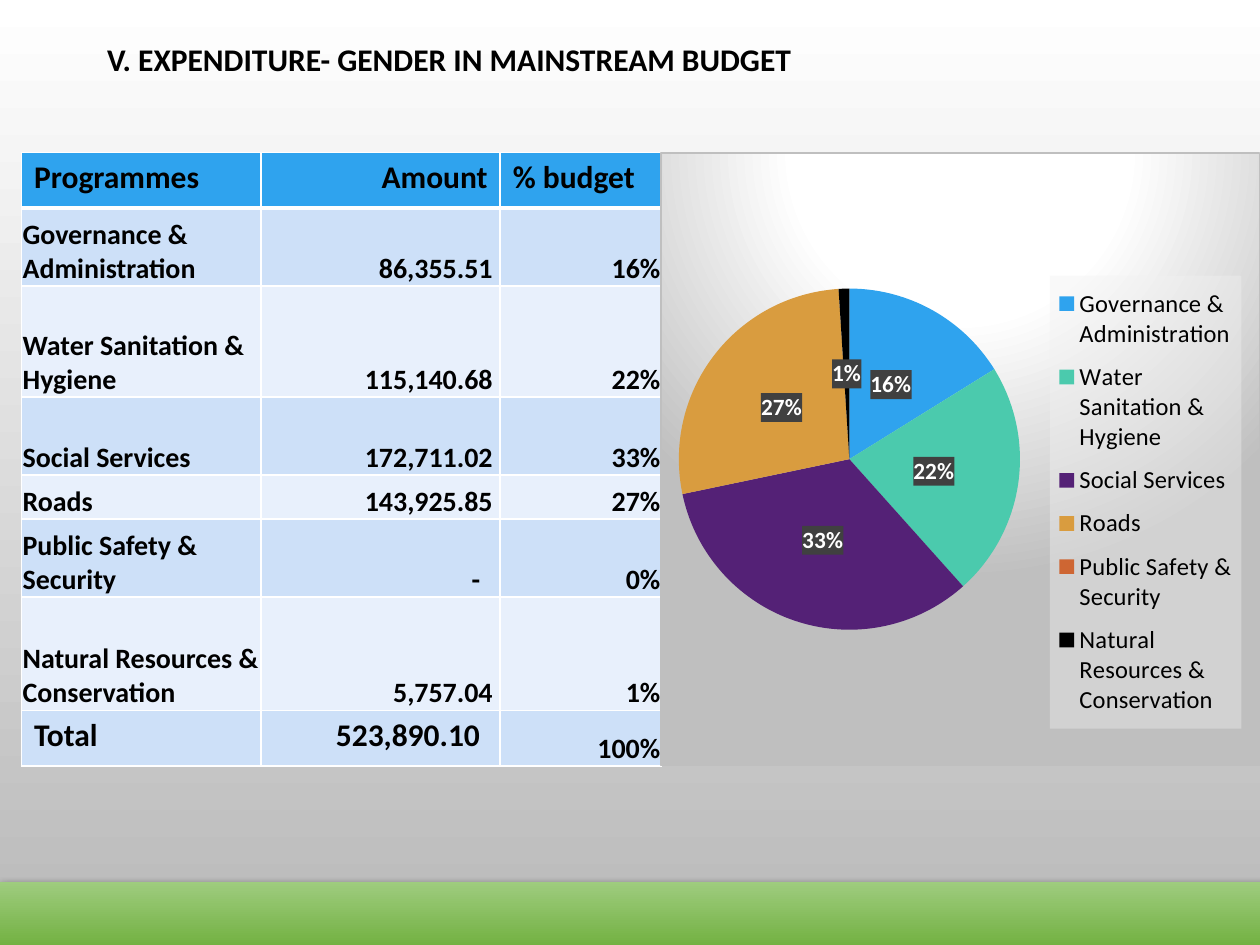
from dataclasses import dataclass

from lxml.etree import SubElement
from pptx import Presentation
from pptx.chart.data import CategoryChartData
from pptx.dml.color import RGBColor as RGB
from pptx.enum.chart import XL_CHART_TYPE as ChartType
from pptx.enum.chart import XL_LABEL_POSITION as LabelPosition
from pptx.enum.chart import XL_LEGEND_POSITION as LegendPosition
from pptx.enum.shapes import MSO_SHAPE as Preset
from pptx.enum.text import MSO_ANCHOR as Anchor
from pptx.enum.text import PP_ALIGN as Align
from pptx.oxml import parse_xml
from pptx.oxml.ns import nsdecls, qn
from pptx.util import Inches, Pt


@dataclass(frozen=True)
class Theme:
    font: str = "Calibri"
    text: str = "000000"
    white: str = "FFFFFF"
    header: str = "2FA3EE"
    bands: tuple = ("CDE0F8", "E8F0FC")
    background: tuple = ("FFFFFF", "B9B9B9")
    footer: tuple = ("9ECC7E", "73B142")
    chart_edge: str = "BFBFBF"
    label_fill: str = "404040"
    legend_fill: str = "F2F2F2"
    large: float = 18
    body: float = 16
    legend: float = 14
    label: float = 13.3


@dataclass(frozen=True)
class Programme:
    name: str
    amount: str
    share: int
    color: str
    height: float
    amount_gap: float = 0.06


THEME = Theme()
PROGRAMMES = (
    Programme("Governance & Administration", "86,355.51", 16, "2FA3EE", 0.62),
    Programme("Water Sanitation & Hygiene", "115,140.68", 22, "4BCAAD", 0.88),
    Programme("Social Services", "172,711.02", 33, "542176", 0.62),
    Programme("Roads", "143,925.85", 27, "D99C3F", 0.35),
    Programme("Public Safety & Security", "-", 0, "CE6633", 0.62, 0.16),
    Programme("Natural Resources & Conservation", "5,757.04", 1, "000000", 0.9),
)
COLUMN_WIDTHS = (1.9, 1.9, 1.28)
END_ROW_HEIGHT = 0.44
TOP, HEIGHT = 1.21, 4.87


def style_font(font, size: float, color: str = THEME.text, bold: bool = False) -> None:
    """Apply the theme font with a size and colour."""
    font.name, font.size, font.bold = THEME.font, Pt(size), bold
    font.color.rgb = RGB.from_string(color)


def fill_gradient(fill, colors: tuple) -> None:
    """Fill from top to bottom with two colours."""
    fill.gradient()
    fill.gradient_angle = 270
    for stop, color in zip(fill.gradient_stops, colors):
        stop.color.rgb = RGB.from_string(color)


def add_title(slide, text: str) -> None:
    """Write the slide heading in the title placeholder."""
    title = slide.shapes.title
    title.left, title.top = Inches(0.75), Inches(0)
    title.width, title.height = Inches(8.5), Inches(0.97)
    title.text_frame.text = text
    title.text_frame.vertical_anchor = Anchor.MIDDLE
    paragraph = title.text_frame.paragraphs[0]
    paragraph.alignment = Align.LEFT
    paragraph.line_spacing = 0.9
    style_font(paragraph.font, THEME.large, bold=True)


def add_footer(slide) -> None:
    """Draw the green band with its soft shadow."""
    band = slide.shapes.add_shape(
        Preset.RECTANGLE, Inches(0), Inches(7), Inches(10.21), Inches(0.51))
    fill_gradient(band.fill, THEME.footer)
    band.line.fill.background()
    band.shadow.inherit = False
    effects = band._element.spPr.find(qn("a:effectLst"))
    shadow = SubElement(effects, qn("a:outerShdw"), blurRad=str(Pt(5)),
                        dist=str(Pt(2)), dir="5400000", rotWithShape="0")
    color = SubElement(shadow, qn("a:srgbClr"), val=THEME.text)
    SubElement(color, qn("a:alpha"), val="69000")


def set_borders(cell, bottom: float) -> None:
    """Give a cell white edges, with its own bottom width."""
    properties = cell._tc.get_or_add_tcPr()
    for index, (side, width) in enumerate(zip("LRTB", (1, 1, 1, bottom))):
        properties.insert(index, parse_xml(
            f'<a:ln{side} {nsdecls("a")} w="{Pt(width)}"><a:solidFill>'
            f'<a:srgbClr val="{THEME.white}"/></a:solidFill></a:ln{side}>'))


def write_cell(cell, text: str, fill: str, align, size: float = THEME.large,
               tight: bool = False, right: float = 0.1, bottom: float = 1) -> None:
    """Write one table cell, tight cells having their text at the bottom."""
    cell.text = text
    cell.fill.solid()
    cell.fill.fore_color.rgb = RGB.from_string(fill)
    cell.margin_right = Inches(right)
    if tight:
        cell.vertical_anchor = Anchor.BOTTOM
        cell.margin_left = cell.margin_top = Inches(0.01)
        cell.margin_bottom = Inches(0)
    paragraph = cell.text_frame.paragraphs[0]
    paragraph.alignment = align
    style_font(paragraph.font, size, bold=True)
    set_borders(cell, bottom)


def add_budget_table(slide) -> None:
    """Build the table of programmes, amounts and shares."""
    heights = (END_ROW_HEIGHT, *(item.height for item in PROGRAMMES), END_ROW_HEIGHT)
    table = slide.shapes.add_table(
        len(heights), len(COLUMN_WIDTHS), Inches(0.17), Inches(TOP),
        Inches(sum(COLUMN_WIDTHS)), Inches(HEIGHT)).table
    table.horz_banding = False
    for column, width in zip(table.columns, COLUMN_WIDTHS):
        column.width = Inches(width)
    for row, height in zip(table.rows, heights):
        row.height = Inches(height)
    headings = ("Programmes", "Amount", "% budget")
    for index, (text, align) in enumerate(zip(headings, (Align.LEFT, Align.RIGHT, Align.LEFT))):
        write_cell(table.cell(0, index), text, THEME.header, align, bottom=3)
    for index, item in enumerate(PROGRAMMES, start=1):
        fill = THEME.bands[(index - 1) % 2]
        columns = ((item.name, Align.LEFT, 0.01),
                   (item.amount, Align.RIGHT, item.amount_gap),
                   (f"{item.share}%", Align.RIGHT, 0.01))
        for column, (text, align, right) in enumerate(columns):
            write_cell(table.cell(index, column), text, fill, align, THEME.body, True, right)
    last, fill = len(heights) - 1, THEME.bands[0]
    write_cell(table.cell(last, 0), "Total", fill, Align.LEFT)
    write_cell(table.cell(last, 1), "523,890.10", fill, Align.RIGHT, right=0.16)
    write_cell(table.cell(last, 2), "100%", fill, Align.RIGHT, THEME.body, True, 0.01)


def chart_fill(content: str, line: str = "<a:ln><a:noFill/></a:ln>"):
    """Return chart shape properties around a fill."""
    return parse_xml(f'<c:spPr {nsdecls("c", "a")}>{content}{line}</c:spPr>')


def solid(color: str, alpha: int = 100) -> str:
    """Return a solid fill with an opacity in percent."""
    return (f'<a:solidFill><a:srgbClr val="{color}"><a:alpha val="{alpha * 1000}"/>'
            "</a:srgbClr></a:solidFill>")


def place(parent, index: int, box: tuple, inner: bool = False) -> None:
    """Set a manual layout as fractions of the chart."""
    for old in parent.findall(qn("c:layout")):
        parent.remove(old)
    target = '<c:layoutTarget val="inner"/>' if inner else ""
    modes = '<c:xMode val="edge"/><c:yMode val="edge"/>'
    sizes = "".join(f'<c:{name} val="{value}"/>' for name, value in zip("xywh", box))
    parent.insert(index, parse_xml(
        f'<c:layout {nsdecls("c")}><c:manualLayout>{target}{modes}{sizes}'
        "</c:manualLayout></c:layout>"))


def add_budget_chart(slide) -> None:
    """Build the pie of programme shares with its legend."""
    data = CategoryChartData()
    data.categories = [item.name for item in PROGRAMMES]
    data.add_series("Series 1", [item.share for item in PROGRAMMES])
    chart = slide.shapes.add_chart(
        ChartType.PIE, Inches(5.24), Inches(TOP), Inches(4.76), Inches(HEIGHT), data).chart
    style_font(chart.font, 10)
    chart.has_title = False
    chart.has_legend = True
    legend = chart.legend
    legend.position = LegendPosition.RIGHT
    legend.include_in_layout = False
    style_font(legend.font, THEME.legend)
    place(legend._element, 1, (0.65, 0.2, 0.32, 0.74))
    legend._element.find(qn("c:overlay")).addnext(chart_fill(solid(THEME.legend_fill, 39)))

    plot = chart.plots[0]
    plot.vary_by_categories = True
    for index, item in enumerate(PROGRAMMES):
        fill = plot.series[0].points[index].format.fill
        fill.solid()
        fill.fore_color.rgb = RGB.from_string(item.color)
    labels = plot.series[0].data_labels
    labels.show_percentage, labels.show_value = True, False
    labels.number_format, labels.number_format_is_linked = "0%", False
    labels.position = LabelPosition.CENTER
    style_font(labels.font, THEME.label, THEME.white, True)
    labels._element.find(qn("c:numFmt")).addnext(chart_fill(solid(THEME.label_fill, 90)))

    space = chart._chartSpace
    place(space.chart.plotArea, 0, (0.03, 0.22, 0.57, 0.56), inner=True)
    stops = "".join(
        f'<a:gs pos="{position * 1000}"><a:srgbClr val="{color}"/></a:gs>'
        for position, color in ((0, THEME.white), (39, THEME.white), (100, THEME.chart_edge)))
    space.chart.addnext(chart_fill(
        f'<a:gradFill><a:gsLst>{stops}</a:gsLst><a:path path="circle">'
        '<a:fillToRect l="50000" t="-80000" r="50000" b="180000"/></a:path></a:gradFill>',
        f'<a:ln w="{Pt(0.75)}">{solid(THEME.chart_edge)}</a:ln>'))


def main() -> None:
    """Build and save the presentation."""
    presentation = Presentation()
    presentation.slide_width, presentation.slide_height = Inches(10), Inches(7.5)
    slide = presentation.slides.add_slide(presentation.slide_layouts[5])
    fill_gradient(slide.background.fill, THEME.background)
    add_title(slide, "V. EXPENDITURE- GENDER IN MAINSTREAM BUDGET")
    add_budget_table(slide)
    add_footer(slide)
    add_budget_chart(slide)
    presentation.save("out.pptx")


if __name__ == "__main__":
    main()
